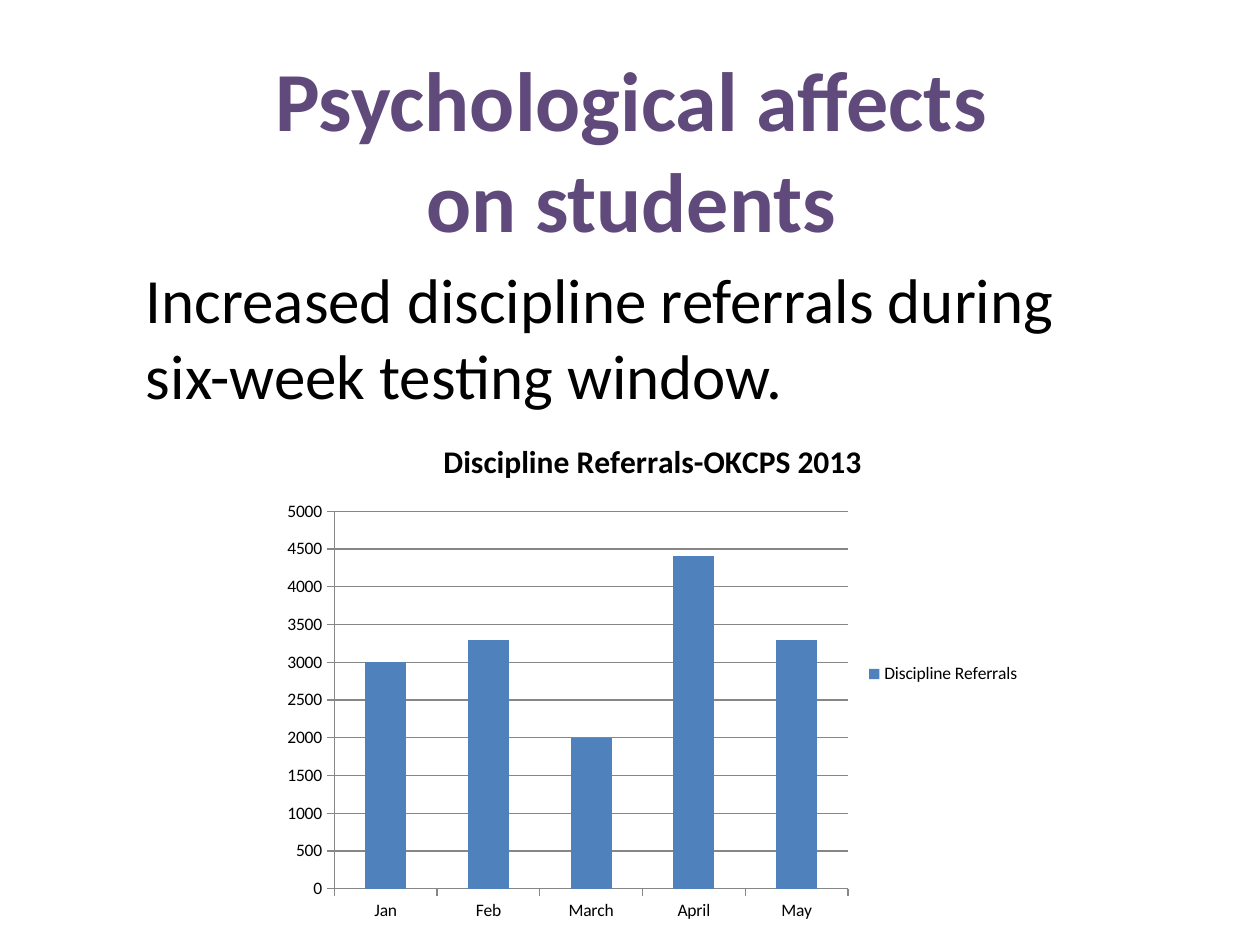
from pptx import Presentation
from pptx.chart.data import CategoryChartData
from pptx.dml.color import RGBColor
from pptx.enum.chart import XL_CHART_TYPE as Chart, XL_LEGEND_POSITION as Legend
from pptx.enum.chart import XL_TICK_MARK as Tick
from pptx.enum.text import MSO_ANCHOR as Anchor, PP_ALIGN as Align
from pptx.util import Inches, Pt

PURPLE = RGBColor(0x60, 0x4A, 0x7B)
BLACK = RGBColor(0, 0, 0)
BLUE = RGBColor(0x4F, 0x81, 0xBD)
GRAY = RGBColor(0x86, 0x86, 0x86)


class Page:
    face = "Calibri"

    def __init__(self, deck):
        self.slide = deck.slides.add_slide(deck.slide_layouts[5])

    def style(self, font, size, color, bold=False):
        font.name, font.size, font.bold = self.face, Pt(size), bold
        font.color.rgb = color

    def fill(self, frame, text, size, color, bold=False, align=Align.LEFT):
        frame.word_wrap = True
        frame.vertical_anchor = Anchor.TOP
        frame.text = text
        par = frame.paragraphs[0]
        par.alignment = align
        self.style(par.runs[0].font, size, color, bold)

    def title(self, text, left, top, width, height):
        shape = self.slide.shapes.title
        shape.left, shape.top = Inches(left), Inches(top)
        shape.width, shape.height = Inches(width), Inches(height)
        self.fill(shape.text_frame, text, 48, PURPLE, True, Align.CENTER)

    def text(self, text, left, top, width, height):
        box = self.slide.shapes.add_textbox(
            Inches(left), Inches(top), Inches(width), Inches(height))
        self.fill(box.text_frame, text, 36, BLACK)

    def columns(self, title, name, data, left, top, width, height):
        table = CategoryChartData()
        table.categories = list(data)
        table.add_series(name, list(data.values()))
        chart = self.slide.shapes.add_chart(
            Chart.COLUMN_CLUSTERED, Inches(left), Inches(top),
            Inches(width), Inches(height), table).chart
        self.style(chart.font, 10, BLACK)

        # Title and legend
        chart.has_title = True
        chart.chart_title.text_frame.text = title
        run = chart.chart_title.text_frame.paragraphs[0].runs[0]
        self.style(run.font, 18, BLACK, True)
        chart.has_legend = True
        chart.legend.position = Legend.RIGHT
        chart.legend.include_in_layout = False

        # Columns
        plot = chart.plots[0]
        plot.gap_width = 150
        plot.vary_by_categories = False
        bars = plot.series[0].format.fill
        bars.solid()
        bars.fore_color.rgb = BLUE

        # Axes
        scale = chart.value_axis
        scale.minimum_scale, scale.maximum_scale = 0, 5000
        scale.major_unit = 500
        scale.has_major_gridlines = True
        for axis in (chart.category_axis, scale):
            axis.major_tick_mark = Tick.OUTSIDE
            axis.format.line.color.rgb = GRAY
        scale.major_gridlines.format.line.color.rgb = GRAY


def main():
    deck = Presentation()
    deck.slide_width, deck.slide_height = Inches(10), Inches(7.5)
    page = Page(deck)

    # Heading and finding
    page.title("Psychological affects on students", 1.83, 0.33, 6.36, 1.72)
    page.text("Increased discipline referrals during six-week testing window.",
              1.06, 2.02, 7.92, 1.31)

    # Referrals by month
    months = {"Jan": 3000, "Feb": 3300, "March": 2000, "April": 4400, "May": 3300}
    page.columns("Discipline Referrals-OKCPS 2013", "Discipline Referrals",
                 months, 2.16, 3.31, 6.04, 4.08)
    deck.save("out.pptx")


if __name__ == "__main__":
    main()
